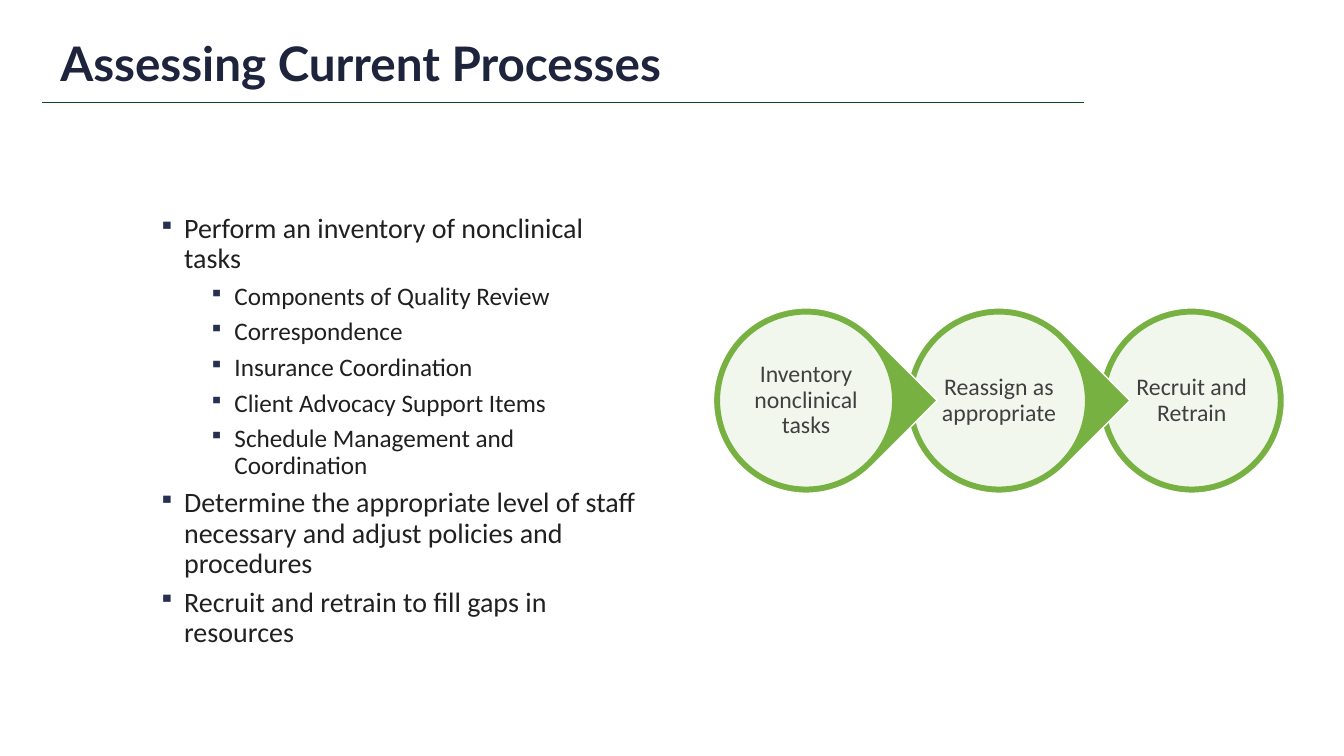
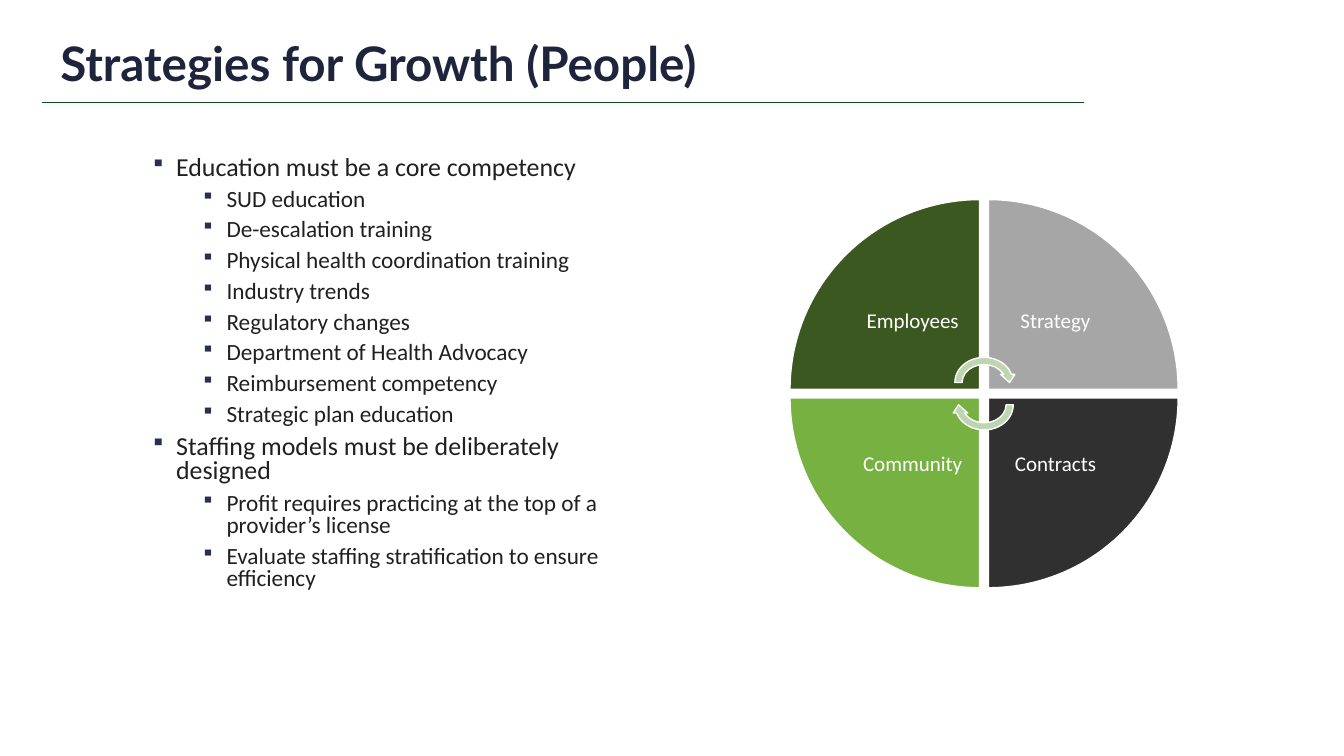
from dataclasses import dataclass

from lxml.etree import SubElement
from pptx import Presentation
from pptx.dml.color import RGBColor
from pptx.enum.shapes import MSO_CONNECTOR, MSO_SHAPE
from pptx.enum.text import MSO_ANCHOR, PP_ALIGN
from pptx.oxml.ns import qn
from pptx.util import Cm, Pt


@dataclass(frozen=True)
class Theme:
    title_font: str = "Lato"
    body_font: str = "Calibri"
    title_size: float = 34
    step_size: float = 17
    wedge_size: float = 15
    title: str = "1D243C"
    rule: str = "0A4E1F"
    body: str = "202020"
    bullet: str = "263050"
    step_text: str = "404040"
    white: str = "FFFFFF"
    green: str = "77B142"
    dark_green: str = "3C5821"
    grey: str = "A6A6A6"
    charcoal: str = "303030"
    pale_green: str = "BDD5B0"


THEME = Theme()

ASSESSING = [
    (0, "Perform an inventory of nonclinical tasks"),
    (1, "Components of Quality Review"),
    (1, "Correspondence"),
    (1, "Insurance Coordination"),
    (1, "Client Advocacy Support Items"),
    (1, "Schedule Management and Coordination"),
    (0, "Determine the appropriate level of staff necessary and adjust policies and procedures"),
    (0, "Recruit and retrain to fill gaps in resources"),
]
STEPS = ["Inventory nonclinical tasks", "Reassign as appropriate", "Recruit and Retrain"]

GROWTH = [
    (0, "Education must be a core competency"),
    (1, "SUD education"),
    (1, "De-escalation training"),
    (1, "Physical health coordination training"),
    (1, "Industry trends"),
    (1, "Regulatory changes"),
    (1, "Department of Health Advocacy"),
    (1, "Reimbursement competency"),
    (1, "Strategic plan education"),
    (0, "Staffing models must be deliberately designed"),
    (1, "Profit requires practicing at the top of a provider’s license"),
    (1, "Evaluate staffing stratification to ensure efficiency"),
]
# Clockwise from the upper left: label, colour, column, row
WEDGES = [
    ("Employees", THEME.dark_green, -1, -1),
    ("Strategy", THEME.grey, 1, -1),
    ("Contracts", THEME.charcoal, 1, 1),
    ("Community", THEME.green, -1, 1),
]


def rgb(color):
    return RGBColor.from_string(color)


def style_paragraph(paragraph, size, color, font=THEME.body_font, bold=False, spacing=0.9):
    paragraph.line_spacing = spacing
    for run in paragraph.runs:
        run.font.name = font
        run.font.size = Pt(size)
        run.font.bold = bold
        run.font.color.rgb = rgb(color)


def add_text_frame(slide, left, top, width, height):
    frame = slide.shapes.add_textbox(Cm(left), Cm(top), Cm(width), Cm(height)).text_frame
    frame.word_wrap = True
    return frame


def set_label(frame, text, size, color, margin):
    """Fill a text frame with one centred label."""
    frame.word_wrap = True
    frame.vertical_anchor = MSO_ANCHOR.MIDDLE
    frame.margin_left = frame.margin_right = Cm(margin)
    frame.margin_top = frame.margin_bottom = Cm(margin)
    frame.text = text
    frame.paragraphs[0].alignment = PP_ALIGN.CENTER
    style_paragraph(frame.paragraphs[0], size, color)


def add_figure(slide, kind, left, top, width, height, fill, line=THEME.white, rotation=0):
    figure = slide.shapes.add_shape(kind, Cm(left), Cm(top), Cm(width), Cm(height))
    figure.shadow.inherit = False
    figure.fill.solid()
    figure.fill.fore_color.rgb = rgb(fill)
    figure.line.color.rgb = rgb(line)
    figure.line.width = Pt(1)
    figure.rotation = rotation
    return figure


def set_opacity(figure, percent):
    color = figure._element.spPr.find(qn("a:solidFill"))[0]
    SubElement(color, qn("a:alpha"), val=str(percent * 1000))


def add_titled_slide(deck, title):
    slide = deck.slides.add_slide(deck.slide_layouts[6])
    rule = slide.shapes.add_connector(
        MSO_CONNECTOR.STRAIGHT, Cm(1.07), Cm(2.59), Cm(27.31), Cm(2.59))
    rule.line.color.rgb = rgb(THEME.rule)
    rule.line.width = Pt(1)
    SubElement(rule._element.spPr, qn("a:effectLst"))
    frame = add_text_frame(slide, 1.27, 0.76, 26.42, 1.68)
    frame.vertical_anchor = MSO_ANCHOR.BOTTOM
    frame.text = title
    style_paragraph(frame.paragraphs[0], THEME.title_size, THEME.title,
                    THEME.title_font, bold=True)
    return slide


def add_bullet(paragraph, level):
    properties = paragraph._p.get_or_add_pPr()
    properties.set("marL", str(Cm(0.66 + 1.27 * level)))
    properties.set("indent", str(Cm(-0.64)))
    color = SubElement(properties, qn("a:buClr"))
    SubElement(color, qn("a:srgbClr"), val=THEME.bullet)
    SubElement(properties, qn("a:buSzPct"), val="80000")
    SubElement(properties, qn("a:buChar"), char="▪")


def add_bullets(slide, items, left, top, height, sizes, spacing):
    """Write (level, text) items; sizes holds one type size per level."""
    frame = add_text_frame(slide, left, top, 12.7, height)
    frame.text = "\n".join(text for _, text in items)
    for paragraph, (level, _) in zip(frame.paragraphs, items):
        paragraph.level = level
        add_bullet(paragraph, level)
        paragraph.space_after = Pt(6)
        style_paragraph(paragraph, sizes[level], THEME.body, spacing=spacing)


def add_step_chain(slide, steps):
    """Draw the steps from the last to the first, so each tip overlaps the next step."""
    left, top, size, pitch, ring = 17.98, 7.76, 4.67, 4.86, 0.15
    inner = size - 2 * ring
    for index, text in reversed(list(enumerate(steps))):
        x = left + index * pitch
        is_last = index == len(steps) - 1
        kind, rotation = (MSO_SHAPE.OVAL, 0) if is_last else (MSO_SHAPE.TEAR, 45)
        add_figure(slide, kind, x, top, size, size, THEME.green, rotation=rotation)
        disc = add_figure(slide, MSO_SHAPE.OVAL, x + ring, top + ring, inner, inner,
                          THEME.white, THEME.green)
        set_opacity(disc, 90)
        set_label(disc.text_frame, text, THEME.step_size, THEME.step_text, 0.05)


def add_wedge_cycle(slide, wedges):
    center_x, center_y, half_gap = 24.8, 9.92, 0.11
    radius, label_size = 4.78, 3.38

    def offset(side, size):
        return half_gap if side > 0 else -half_gap - size

    for index, (text, color, column, row) in enumerate(wedges):
        add_figure(slide, MSO_SHAPE.PIE_WEDGE, center_x + offset(column, radius),
                   center_y + offset(row, radius), radius, radius, color,
                   rotation=90 * index)
        label = add_text_frame(slide, center_x + offset(column, label_size),
                               center_y + offset(row, label_size), label_size, label_size)
        set_label(label, text, THEME.wedge_size, THEME.white, 0.3)

    width, height, shift = 1.65, 1.45, 0.28
    for side, rotation in ((-1, 0), (1, 180)):
        add_figure(slide, MSO_SHAPE.CIRCULAR_ARROW, center_x - width / 2,
                   center_y + side * shift - height / 2, width, height,
                   THEME.pale_green, rotation=rotation)


def main():
    deck = Presentation()
    deck.slide_width, deck.slide_height = Cm(33.87), Cm(19.05)

    assessing = add_titled_slide(deck, "Assessing Current Processes")
    add_bullets(assessing, ASSESSING, 3.73, 5.28, 11.46, sizes=(20, 18), spacing=0.9)
    add_step_chain(assessing, STEPS)

    growth = add_titled_slide(deck, "Strategies for Growth (People)")
    add_bullets(growth, GROWTH, 3.53, 3.81, 12.73, sizes=(18.5, 16.6), spacing=0.8)
    add_wedge_cycle(growth, WEDGES)

    deck.save("out.pptx")


if __name__ == "__main__":
    main()
